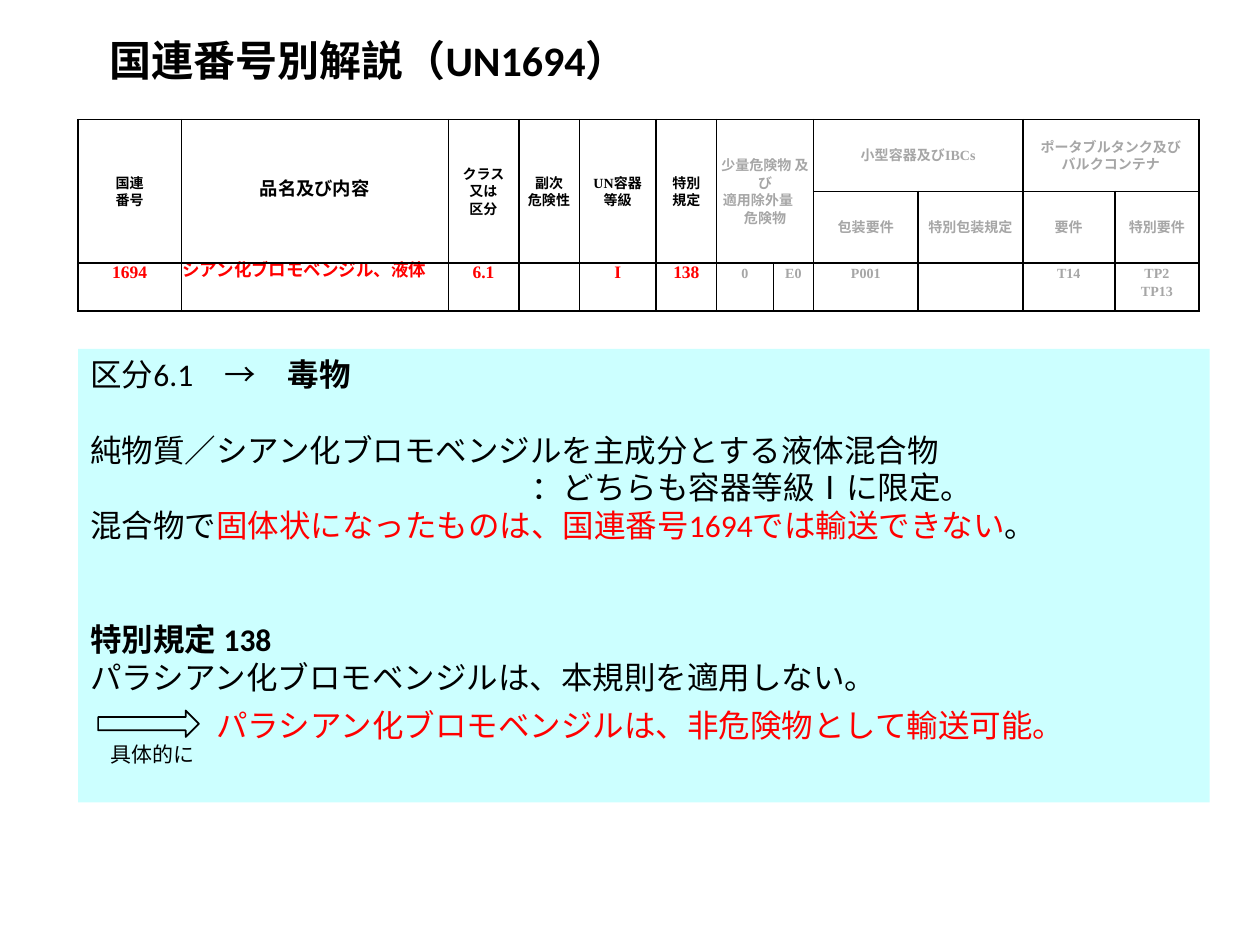
from lxml.etree import SubElement
from pptx import Presentation
from pptx.dml.color import RGBColor
from pptx.enum.shapes import MSO_SHAPE as SHAPE
from pptx.enum.text import MSO_ANCHOR as ANCHOR, MSO_AUTO_SIZE as AUTO, PP_ALIGN as ALIGN
from pptx.oxml.ns import qn
from pptx.util import Pt

BLACK = RGBColor(0, 0, 0)
RED = RGBColor(255, 0, 0)
GREY = RGBColor(0xA6, 0xA6, 0xA6)
CYAN = RGBColor(0xCC, 0xFF, 0xFF)
BODY_FONT, TABLE_FONT = "Calibri", "Times New Roman"

COLS = [59, 152.6, 40.3, 34.6, 43.9, 34.6, 32.4, 23, 59.8, 59.8, 52.6, 48.2]
ROWS = [41, 41, 27.4]
FIRST_GREY = 6  # columns from here on are greyed out

# Header cells: row, column, rows spanned, columns spanned, lines
HEADERS = [
    (0, 0, 2, 1, "国連\n番号"),
    (0, 1, 2, 1, "品名及び内容"),
    (0, 2, 2, 1, "クラス\n又は\n区分"),
    (0, 3, 2, 1, "副次\n危険性"),
    (0, 4, 2, 1, "UN容器\n等級"),
    (0, 5, 2, 1, "特別\n規定"),
    (0, 6, 2, 2, "少量危険物 及び\n適用除外量　危険物"),
    (0, 8, 1, 2, "小型容器及びIBCs"),
    (0, 10, 1, 2, "ポータブルタンク及び\nバルクコンテナ"),
    (1, 8, 1, 1, "包装要件"),
    (1, 9, 1, 1, "特別包装規定"),
    (1, 10, 1, 1, "要件"),
    (1, 11, 1, 1, "特別要件"),
]
ENTRY = ["1694", "シアン化ブロモベンジル、液体", "6.1", "", "I", "138",
         "0", "E0", "P001", "", "T14", "TP2\vTP13"]

# Explanation: space before, space after, left indent, runs (text, bold, colour)
EXPLANATION = [
    (0, 0, 0, [("区分6.1　→　", False, BLACK), ("毒物", True, BLACK)]),
    (21.6, 0, 0, [("純物質／シアン化ブロモベンジルを主成分とする液体混合物", False, BLACK)]),
    (0, 0, 252, [("：どちらも容器等級Ⅰに限定。", False, BLACK)]),
    (0, 0, 0, [("混合物で", False, BLACK),
               ("固体状になったものは、国連番号1694では輸送できない", False, RED),
               ("。", False, BLACK)]),
    (43.5, 0, 0, [("特別規定 138", True, BLACK)]),
    (0, 6, 0, [("パラシアン化ブロモベンジルは、本規則を適用しない。", False, BLACK)]),
    (0, 6, 72, [("パラシアン化ブロモベンジルは、非危険物として輸送可能。", False, RED)]),
]


def set_font(font, name, size, color, bold=False):
    font.name, font.size, font.bold = name, Pt(size), bold
    font.color.rgb = color


def add_title(slide, x, y, w, h):
    sp = slide.shapes.title
    sp.left, sp.top, sp.width, sp.height = Pt(x), Pt(y), Pt(w), Pt(h)
    tf = sp.text_frame
    tf.text = "国連番号別解説（UN1694）"
    tf.auto_size, tf.vertical_anchor = AUTO.NONE, ANCHOR.MIDDLE
    p = tf.paragraphs[0]
    p.alignment, p.line_spacing = ALIGN.LEFT, 0.9
    set_font(p.font, BODY_FONT, 24, BLACK, True)


def add_borders(cell):
    tc_pr = cell._tc.get_or_add_tcPr()
    for i, side in enumerate(("lnL", "lnR", "lnT", "lnB")):
        ln = tc_pr.makeelement(qn("a:" + side), {"w": str(Pt(1))})
        fill = SubElement(ln, qn("a:solidFill"))
        SubElement(fill, qn("a:srgbClr"), val=str(BLACK))
        tc_pr.insert(i, ln)


def fill_cell(cell, text, size, color, align=ALIGN.CENTER):
    cell.text = text
    for p in cell.text_frame.paragraphs:
        p.alignment, p.line_spacing = align, Pt(10)
        set_font(p.font, TABLE_FONT, size, color, True)


def add_entry_table(slide, x, y, w, h):
    table = slide.shapes.add_table(len(ROWS), len(COLS), Pt(x), Pt(y), Pt(w), Pt(h)).table
    table.first_row = table.horz_banding = False
    for col, width in zip(table.columns, COLS):
        col.width = Pt(width)
    for row, height in zip(table.rows, ROWS):
        row.height = Pt(height)
    for cell in table.iter_cells():
        cell.margin_left = cell.margin_right = cell.margin_top = Pt(0.7)
        cell.margin_bottom = 0
        cell.fill.background()
        add_borders(cell)

    # Headers
    for r, c, n_rows, n_cols, text in HEADERS:
        cell = table.cell(r, c)
        if n_rows * n_cols > 1:
            cell.merge(table.cell(r + n_rows - 1, c + n_cols - 1))
        cell.vertical_anchor = ANCHOR.MIDDLE
        fill_cell(cell, text, 10.5 if c == 1 else 8, GREY if c >= FIRST_GREY else BLACK)

    # Entry row
    for c, text in enumerate(ENTRY):
        size, color = (8, GREY) if c >= FIRST_GREY else (10, RED)
        fill_cell(table.cell(2, c), text, size, color, ALIGN.LEFT if c == 1 else ALIGN.CENTER)


def add_explanation(slide, x, y, w, h):
    # Panel
    sp = slide.shapes.add_shape(SHAPE.RECTANGLE, Pt(x), Pt(y), Pt(w), Pt(h))
    sp.shadow.inherit = False
    sp.fill.solid()
    sp.fill.fore_color.rgb = CYAN
    sp.line.fill.background()
    tf = sp.text_frame
    tf.word_wrap, tf.vertical_anchor = True, ANCHOR.TOP
    for i, (before, after, indent, runs) in enumerate(EXPLANATION):
        p = tf.paragraphs[0] if i == 0 else tf.add_paragraph()
        p.alignment = ALIGN.LEFT
        p.space_before, p.space_after = Pt(before), Pt(after)
        p._p.get_or_add_pPr().set("marL", str(Pt(indent)))
        for text, bold, color in runs:
            r = p.add_run()
            r.text = text
            set_font(r.font, BODY_FONT, 18, color, bold)

    # Arrow and its caption
    caption = slide.shapes.add_textbox(Pt(x + 11.5), Pt(y + 221), Pt(68.4), Pt(21.6))
    tf = caption.text_frame
    tf.word_wrap = True
    tf.text = "具体的に"
    set_font(tf.paragraphs[0].font, BODY_FONT, 12, BLACK)
    arrow = slide.shapes.add_shape(SHAPE.RIGHT_ARROW, Pt(x + 11.5), Pt(y + 206.6), Pt(57.6), Pt(15.1))
    arrow.shadow.inherit = False
    arrow.fill.background()
    arrow.line.color.rgb, arrow.line.width = BLACK, Pt(1)


def main():
    prs = Presentation()
    prs.slide_width, prs.slide_height = Pt(720), Pt(540)
    slide = prs.slides.add_slide(prs.slide_layouts[5])
    add_title(slide, 55.4, 17.3, 325.4, 37.4)
    add_entry_table(slide, 44.6, 68.4, sum(COLS), sum(ROWS))
    add_explanation(slide, 44.6, 199.4, 646.6, 259.2)
    prs.save("out.pptx")


if __name__ == "__main__":
    main()
